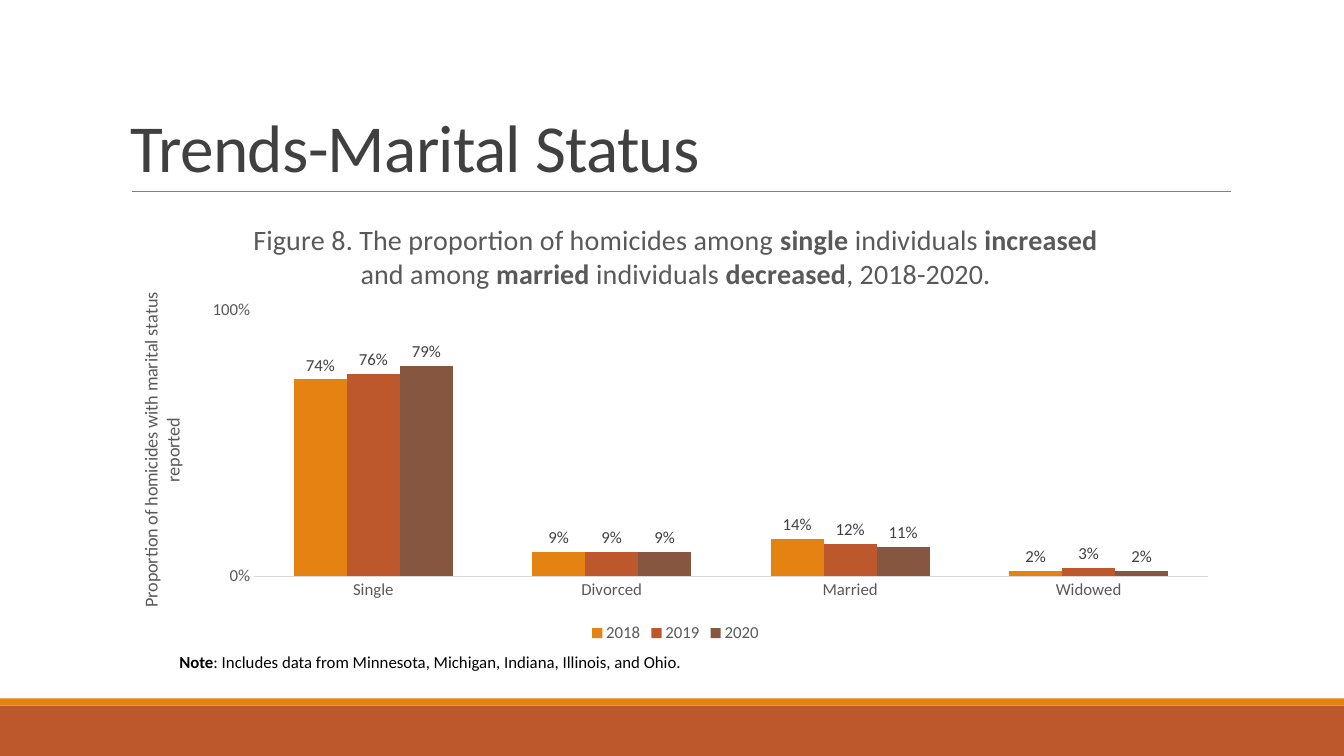
from lxml import etree
from pptx import Presentation
from pptx.chart.data import CategoryChartData
from pptx.dml.color import RGBColor
from pptx.enum import chart as ch, shapes, text
from pptx.util import Inches, Pt

# Content
HEADING = [("Trends-Marital Status", False)]
CAPTION = [
    ("Figure 8. The proportion of homicides among ", False), ("single", True),
    (" individuals ", False), ("increased", True), (" and among ", False),
    ("married", True), (" individuals ", False), ("decreased", True),
    (", 2018-2020.", False),
]
AXIS_TITLE = [("Proportion of homicides with marital status reported", False)]
NOTE = [("Note", True),
        (": Includes data from Minnesota, Michigan, Indiana, Illinois, and Ohio.", False)]
STATUSES = ["Single", "Divorced", "Married", "Widowed"]
YEARS = {
    "2018": ("E48312", [0.74, 0.09, 0.14, 0.02]),
    "2019": ("BD582C", [0.76, 0.09, 0.12, 0.03]),
    "2020": ("865640", [0.79, 0.09, 0.11, 0.02]),
}
BANDS = [("BD582C", 7, 0.5), ("E48312", 6.93, 0.07)]  # colour, top, height
PLOT_AREA = {"x": 0.12, "y": 0.24, "w": 0.86, "h": 0.6}  # shares of the chart
FONT, GREY, DARK = "Calibri", "595959", "404040"
WIDTH, HEIGHT = 13.33, 7.5


def rgb(value):
    return RGBColor.from_string(value)


def style(font, size, color, bold=False):
    font.name, font.size, font.bold = FONT, Pt(size), bold
    font.color.rgb = rgb(color)


def write(frame, runs, size, color, spacing=None, line=None):
    paragraph = frame.paragraphs[0]
    if line:
        paragraph.line_spacing = line
    for words, bold in runs:
        run = paragraph.add_run()
        run.text = words
        style(run.font, size, color, bold)
        if spacing is not None:
            run.font._element.set("spc", str(spacing))


def add_text(box, runs, size, color, anchor=text.MSO_ANCHOR.TOP, **options):
    frame = slide.shapes.add_textbox(*map(Inches, box)).text_frame
    frame.word_wrap = True
    frame.vertical_anchor = anchor
    write(frame, runs, size, color, **options)


def place_plot(chart):
    plot_area = chart._chartSpace.chart.plotArea
    ns = plot_area.nsmap["c"]
    for old in plot_area.findall(f"{{{ns}}}layout"):
        plot_area.remove(old)
    layout = etree.Element(f"{{{ns}}}layout")
    manual = etree.SubElement(layout, f"{{{ns}}}manualLayout")
    settings = {"layoutTarget": "inner", "xMode": "edge", "yMode": "edge", **PLOT_AREA}
    for tag, value in settings.items():
        etree.SubElement(manual, f"{{{ns}}}{tag}").set("val", str(value))
    plot_area.insert(0, layout)


deck = Presentation()
deck.slide_width, deck.slide_height = Inches(WIDTH), Inches(HEIGHT)
slide = deck.slides.add_slide(deck.slide_layouts[6])

# Footer bands
for color, top, height in BANDS:
    band = slide.shapes.add_shape(shapes.MSO_SHAPE.RECTANGLE, 0, Inches(top),
                                  Inches(WIDTH), Inches(height))
    band.shadow.inherit = False
    band.fill.solid()
    band.fill.fore_color.rgb = rgb(color)
    band.line.fill.background()

# Heading and its rule
rule = slide.shapes.add_connector(shapes.MSO_CONNECTOR.STRAIGHT,
                                  *map(Inches, (1.31, 1.9, 12.21, 1.9)))
rule.line.color.rgb = rgb("808080")
rule.line.width = Pt(0.5)
properties = rule._element.spPr
etree.SubElement(properties, f"{{{properties.nsmap['a']}}}effectLst")
add_text((1.2, 0.31, 11, 1.59), HEADING, 48, DARK,
         anchor=text.MSO_ANCHOR.BOTTOM, spacing=-50, line=0.85)

# Chart
data = CategoryChartData(number_format="0%")
data.categories = STATUSES
for year, (_, shares) in YEARS.items():
    data.add_series(year, shares)
chart = slide.shapes.add_chart(ch.XL_CHART_TYPE.COLUMN_CLUSTERED,
                               *map(Inches, (1.2, 2.02, 11, 4.4)), data).chart
style(chart.font, 12, GREY)
chart.has_title = True
write(chart.chart_title.text_frame, CAPTION, 20, GREY)
chart.chart_title.include_in_layout = False
chart.has_legend = True
chart.legend.position = ch.XL_LEGEND_POSITION.BOTTOM
chart.legend.include_in_layout = False
style(chart.legend.font, 12, GREY)
place_plot(chart)

# Axes
statuses, shares = chart.category_axis, chart.value_axis
for axis in (statuses, shares):
    axis.major_tick_mark = axis.minor_tick_mark = ch.XL_TICK_MARK.NONE
    axis.has_major_gridlines = False
    style(axis.tick_labels.font, 12, GREY)
statuses.format.line.color.rgb = rgb("D9D9D9")
statuses.format.line.width = Pt(0.75)
shares.format.line.fill.background()
shares.minimum_scale, shares.maximum_scale, shares.major_unit = 0, 1, 1
shares.tick_labels.number_format = "0%"
shares.tick_labels.number_format_is_linked = False
shares.has_title = True
write(shares.axis_title.text_frame, AXIS_TITLE, 13, GREY)

# Columns and their labels
columns = chart.plots[0]
columns.gap_width, columns.overlap, columns.vary_by_categories = 150, 0, False
for year, (color, _) in zip(columns.series, YEARS.values()):
    year.format.fill.solid()
    year.format.fill.fore_color.rgb = rgb(color)
    labels = year.data_labels
    labels.show_value = True
    labels.position = ch.XL_LABEL_POSITION.OUTSIDE_END
    labels.number_format = "0%"
    labels.number_format_is_linked = False
    style(labels.font, 12, DARK)

# Note
add_text((1.68, 6.42, 10.25, 0.3), NOTE, 12, "000000")

deck.save("out.pptx")
